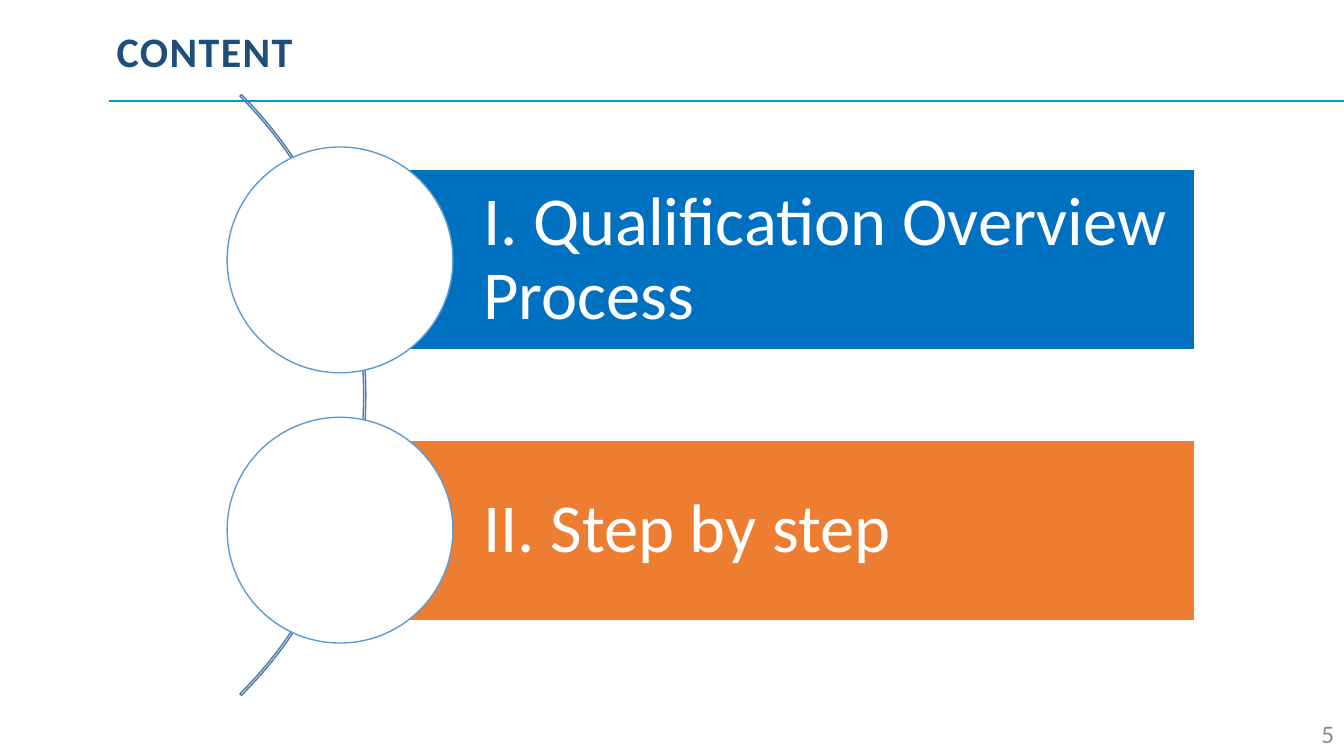
"""Build the content slide: a titled agenda of bars strung along an arc."""
import dataclasses

import pptx
import pptx.dml.color
import pptx.enum.shapes
import pptx.enum.text
import pptx.oxml.ns
import pptx.util

Cm = pptx.util.Cm
Pt = pptx.util.Pt
RGBColor = pptx.dml.color.RGBColor
Kind = pptx.enum.shapes.MSO_SHAPE
Align = pptx.enum.text.PP_ALIGN

WHITE = RGBColor(0xFF, 0xFF, 0xFF)
NAVY = RGBColor(0x1F, 0x4E, 0x79)
CYAN = RGBColor(0x00, 0x99, 0xCC)
GREY = RGBColor(0x8C, 0x8C, 0x8C)
STEEL = RGBColor(0x49, 0x7C, 0xAB)
SKY = RGBColor(0x5B, 0x9B, 0xD5)
BLUE = RGBColor(0x00, 0x70, 0xC0)
ORANGE = RGBColor(0xED, 0x7D, 0x31)

WIDTH, HEIGHT = 33.87, 19.05
HUB_X = 8.57
FIRST_Y, PITCH = 6.55, 6.81
BAR_W, BAR_H = 21.53, 4.55
DISC = 5.69
ARC = 21.41
ARC_X = -12.19


@dataclasses.dataclass(frozen=True)
class Topic:
    label: str
    color: RGBColor


TOPICS = [
    Topic("I. Qualification Overview Process", BLUE),
    Topic("II. Step by step", ORANGE),
]


def write(shape, text: str, *, size: float, color: RGBColor, bold: bool = False,
          align=Align.LEFT, leading: float = 1.0, track: int = 0,
          pads: tuple = (0.25, 0.13, 0.25, 0.13)) -> None:
    frame = shape.text_frame
    frame.word_wrap = True
    frame.vertical_anchor = pptx.enum.text.MSO_ANCHOR.MIDDLE
    (frame.margin_left, frame.margin_top,
     frame.margin_right, frame.margin_bottom) = map(Cm, pads)
    para = frame.paragraphs[0]
    para.alignment = align
    para.line_spacing = leading
    run = para.add_run()
    run.text = text
    font = run.font
    font.name = "Calibri"
    font.size = Pt(size)
    font.bold = bold
    font.color.rgb = color
    if track:
        run._r.get_or_add_rPr().set("spc", str(track))


def add_form(slide, kind, x: float, y: float, w: float, h: float,
             line: RGBColor, fill: RGBColor | None = None):
    form = slide.shapes.add_shape(kind, Cm(x), Cm(y), Cm(w), Cm(h))
    form.shadow.inherit = False
    if fill is None:
        form.fill.background()
    else:
        form.fill.solid()
        form.fill.fore_color.rgb = fill
    form.line.color.rgb = line
    form.line.width = Pt(1)
    return form


def add_box(slide, x: float, y: float, w: float, h: float):
    return slide.shapes.add_textbox(Cm(x), Cm(y), Cm(w), Cm(h))


def add_rule(slide, x: float, y: float, end: float) -> None:
    rule = slide.shapes.add_connector(
        pptx.enum.shapes.MSO_CONNECTOR.STRAIGHT, Cm(x), Cm(y), Cm(end), Cm(y))
    rule.line.color.rgb = CYAN
    rule.line.width = Pt(1.5)
    props = rule._element.spPr
    props.append(props.makeelement(pptx.oxml.ns.qn("a:effectLst"), {}))


def add_arc(slide, mid: float) -> None:
    arc = add_form(slide, Kind.BLOCK_ARC, ARC_X, mid - ARC / 2, ARC, ARC, STEEL)
    for slot, value in enumerate((189, 27, 0.00256)):
        arc.adjustments[slot] = value


def add_topic(slide, topic: Topic, mid: float) -> None:
    bar = add_form(slide, Kind.RECTANGLE, HUB_X, mid - BAR_H / 2,
                   BAR_W, BAR_H, WHITE, topic.color)
    write(bar, topic.label, size=49, color=WHITE, leading=0.9,
          pads=(3.61, 0.36, 0.36, 0.36))
    add_form(slide, Kind.OVAL, HUB_X - DISC / 2, mid - DISC / 2,
             DISC, DISC, SKY, WHITE)


def main() -> None:
    deck = pptx.Presentation()
    deck.slide_width, deck.slide_height = Cm(WIDTH), Cm(HEIGHT)
    slide = deck.slides.add_slide(deck.slide_layouts[6])
    add_rule(slide, 2.74, 2.54, WIDTH)
    write(add_box(slide, 26.25, 17.96, 7.62, 1.02), "5",
          size=18, color=GREY, align=Align.RIGHT)
    write(add_box(slide, 2.69, 0.51, 16.92, 1.55), "CONTENT",
          size=30, color=NAVY, bold=True, track=100)
    add_arc(slide, FIRST_Y + PITCH * (len(TOPICS) - 1) / 2)
    for rank, topic in enumerate(TOPICS):
        add_topic(slide, topic, FIRST_Y + rank * PITCH)
    deck.save("out.pptx")


if __name__ == "__main__":
    main()
